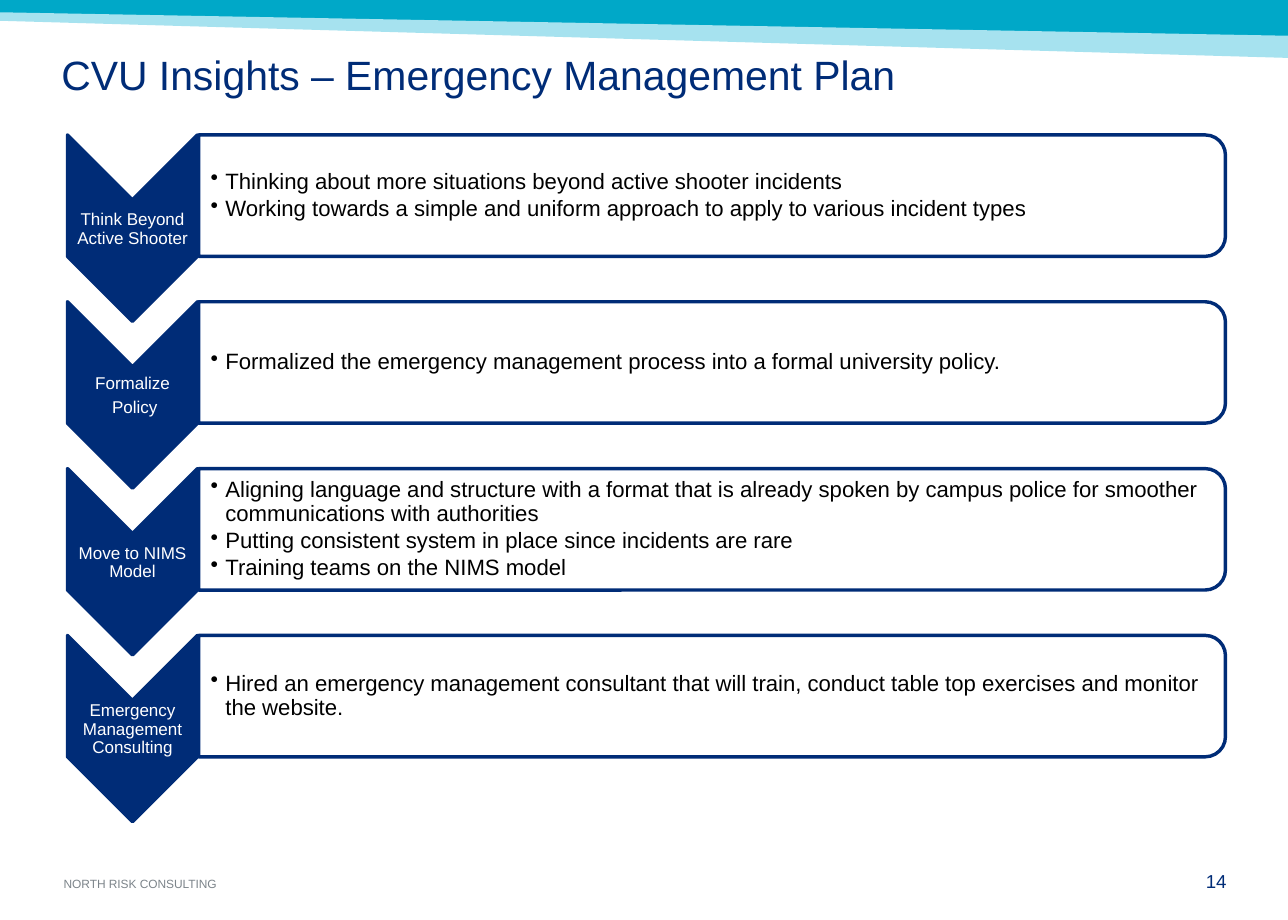
from lxml.etree import SubElement
from pptx import Presentation
from pptx.dml.color import RGBColor
from pptx.enum.shapes import MSO_SHAPE as Preset
from pptx.enum.text import MSO_ANCHOR as Anchor, PP_ALIGN as Align
from pptx.oxml.ns import qn
from pptx.util import Pt

COLORS = {"navy": "002C77", "teal": "00A8C8", "sky": "A6E2EF",
          "gray": "7C848A", "white": "FFFFFF", "black": "000000"}
WIDTH, HEIGHT = 756, 540
ROW_PITCH, ROW_BOX = 97.92, (39.6, 79.2, 679.7, 71.3)
ARROW_WIDTH, ARROW_HEIGHT = 76.3, 109.4
BULLET_INDENT = 8.64

BANDS = [
    ("teal", [(0, 0), (WIDTH, 0), (WIDTH, 23), (0, 8.6)]),
    ("sky", [(0, 7.2), (WIDTH, 21), (WIDTH, 34), (0, 12.2)]),
]
STEPS = [
    (["Think Beyond Active Shooter"],
     ["Thinking about more situations beyond active shooter incidents",
      "Working towards a simple and uniform approach to apply to various incident types"]),
    (["Formalize", " Policy"],
     ["Formalized the emergency management process into a formal university policy."]),
    (["Move to NIMS Model"],
     ["Aligning language and structure with a format that is already spoken by "
      "campus police for smoother communications with authorities",
      "Putting consistent system in place since incidents are rare",
      "Training teams on the NIMS model"]),
    (["Emergency Management Consulting"],
     ["Hired an emergency management consultant that will train, conduct table top "
      "exercises and monitor the website."]),
]


def color(name):
    """Return the named colour."""
    return RGBColor.from_string(COLORS[name])


def apply(target, values):
    """Set every attribute in a dict of format values."""
    for name, value in values.items():
        setattr(target, name, value)


def add_text(page, box, lines, size, ink, insets=(0, 0, 0, 0), anchor=Anchor.TOP,
             bullets=False, **layout):
    """Add a text box with one paragraph per line."""
    frame = page.shapes.add_textbox(*map(Pt, box)).text_frame
    sides = ("margin_left", "margin_top", "margin_right", "margin_bottom")
    apply(frame, dict(zip(sides, map(Pt, insets)), word_wrap=True, vertical_anchor=anchor))
    for index, line in enumerate(lines):
        para = frame.add_paragraph() if index else frame.paragraphs[0]
        apply(para, layout)
        run = para.add_run()
        run.text = line
        apply(run.font, {"name": "Arial", "size": Pt(size)})
        run.font.color.rgb = color(ink)
        if bullets:
            props = para._p.get_or_add_pPr()
            props.set("marL", str(Pt(BULLET_INDENT)))
            props.set("indent", str(-Pt(BULLET_INDENT)))
            SubElement(props, qn("a:buChar")).set("char", "•")


def add_turned(page, preset, box, fill):
    """Add a preset turned by 90 degrees so that it fills the given box."""
    left, top, width, height = box
    shift = (width - height) / 2
    shape = page.shapes.add_shape(
        preset, *map(Pt, (left + shift, top - shift, height, width)))
    shape.rotation = 90
    shape.shadow.inherit = False
    shape.fill.solid()
    shape.fill.fore_color.rgb = color(fill)
    shape.line.color.rgb = color("navy")
    shape.line.width = Pt(2)
    return shape


def draw_bands(page):
    """Draw the two slanted bands along the top edge."""
    for fill, points in BANDS:
        corners = [(Pt(x), Pt(y)) for x, y in points]
        builder = page.shapes.build_freeform(*corners[0])
        builder.add_line_segments(corners[1:], close=True)
        band = builder.convert_to_shape()
        band.shadow.inherit = False
        band.fill.solid()
        band.fill.fore_color.rgb = color(fill)
        band.line.fill.background()


def draw_step(page, box, label, points):
    """Draw one step: a labelled arrow and its panel of points."""
    left, top, width, height = box
    add_turned(page, Preset.CHEVRON, (left, top, ARROW_WIDTH, ARROW_HEIGHT), "navy")
    add_text(page, (left, top + 38.9, ARROW_WIDTH, 33.1), label, 10, "white",
             (0.72,) * 4, Anchor.MIDDLE, alignment=Align.CENTER,
             line_spacing=0.9, space_after=Pt(3.5))
    panel_left, panel_width = left + ARROW_WIDTH + 0.7, width - ARROW_WIDTH - 0.7
    panel = add_turned(page, Preset.ROUND_2_SAME_RECTANGLE,
                       (panel_left, top, panel_width, height), "white")
    tint = panel._element.spPr.find(qn("a:solidFill"))[0]
    SubElement(tint, qn("a:alpha")).set("val", "90000")
    add_text(page, (panel_left, top + 3.5, panel_width - 2.9, height - 7), points, 13,
             "black", (7.2, 0.72, 0.72, 0.72), Anchor.MIDDLE, bullets=True,
             line_spacing=0.9, space_after=Pt(1.95))


def draw_footer(page, box):
    """Draw the firm name and the page number."""
    left, top, width, height = box
    add_text(page, (left, top + 4.3, 227.5, 7.9), ["NORTH RISK CONSULTING"], 7, "gray",
             anchor=Anchor.BOTTOM)
    add_text(page, (left + width - 35.3, top, 35.3, height), ["14"], 11, "navy",
             alignment=Align.RIGHT)


def main():
    """Build the slide and save it."""
    deck = Presentation()
    apply(deck, {"slide_width": Pt(WIDTH), "slide_height": Pt(HEIGHT)})
    page = deck.slides.add_slide(deck.slide_layouts[6])
    draw_bands(page)
    add_text(page, (36, 30.2, 684, 54.7), ["CVU Insights – Emergency Management Plan"],
             24, "navy", (0, 3.6, 7.2, 3.6), line_spacing=0.83)
    left, top, width, height = ROW_BOX
    for index, (label, points) in enumerate(STEPS):
        draw_step(page, (left, top + index * ROW_PITCH, width, height), label, points)
    draw_footer(page, (37.4, 510.5, 682.6, 13))
    deck.save("out.pptx")


if __name__ == "__main__":
    main()
